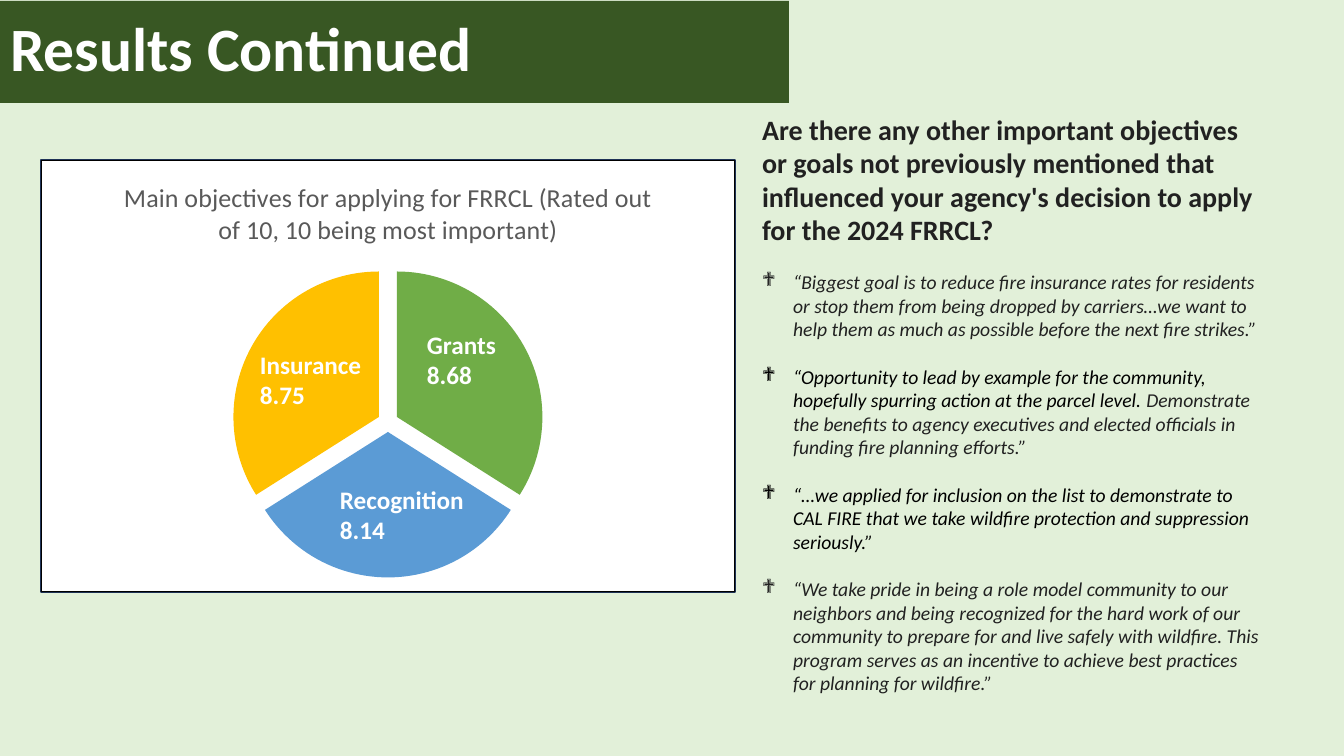
from lxml import etree
from pptx import Presentation
from pptx import util as u
from pptx.chart.data import CategoryChartData
from pptx.dml.color import RGBColor
from pptx.enum import chart as charts, shapes, text
from pptx.oxml import parse_xml
from pptx.oxml.ns import nsdecls, qn

THEME = {
    "font": "Calibri",
    "page": "E2F0D9", "banner": "385723", "white": "FFFFFF", "black": "000000",
    "ink": "212121", "frame": "1E3256", "caption": "595959",
    "slices": ["70AD47", "5B9BD5", "FFC000", "43682B"],
    "title_pt": 44, "question_pt": 20, "label_pt": 18, "caption_pt": 18.6,
    "quote_pt": 14, "gap_pt": 17,
}
PX = 914400 / 100.8
QUESTION = ("Are there any other important objectives or goals not previously mentioned "
            "that influenced your agency's decision to apply for the 2024 FRRCL?")
QUOTES = [
    [("“Biggest goal is to reduce fire insurance rates for residents or stop them from being "
      "dropped by carriers…we want to help them as much as possible before the next fire "
      "strikes.”", "ink")],
    [("“Opportunity to lead by example for the community, hopefully spurring action at the "
      "parcel level. ", "black"),
     ("Demonstrate the benefits to agency executives and elected officials in funding fire "
      "planning efforts.”", "ink")],
    [("“…we applied for inclusion on the list to demonstrate to CAL FIRE that we take wildfire "
      "protection and suppression seriously.”", "black")],
    [("“We take pride in being a role model community to our neighbors and being recognized for "
      "the hard work of our community to prepare for and live safely with wildfire. This program "
      "serves as an incentive to achieve best practices for planning for wildfire.”", "ink")],
]
LABELS = [("Grants", "8.68", 417, 324), ("Recognition", "8.14", 330, 479),
          ("Insurance", "8.75", 250, 344)]
FRAME = (41, 160, 694, 432)
PIE = (232, 266, 312, 312)


def emu(*lengths):
    """Turn px lengths into EMU."""
    return [u.Emu(round(length * PX)) for length in lengths]


def add_span(para, words, size, color, bold=False, italic=False):
    span = para.add_run()
    span.text = words
    font = span.font
    font.name, font.size = THEME["font"], u.Pt(THEME[size])
    font.bold, font.italic = bold, italic
    font.color.rgb = RGBColor.from_string(THEME[color])


deck = Presentation()
deck.slide_width, deck.slide_height = emu(1344, 756)
page = deck.slides.add_slide(deck.slide_layouts[1])
page.background.fill.solid()
page.background.fill.fore_color.rgb = RGBColor.from_string(THEME["page"])

# Title banner
banner = page.shapes.title
banner.left, banner.top, banner.width, banner.height = emu(0, 1, 789, 102)
banner.fill.solid()
banner.fill.fore_color.rgb = RGBColor.from_string(THEME["banner"])
banner.text_frame.auto_size = text.MSO_AUTO_SIZE.NONE
banner.text_frame.vertical_anchor = text.MSO_ANCHOR.MIDDLE
para = banner.text_frame.paragraphs[0]
para.alignment, para.line_spacing = text.PP_ALIGN.LEFT, 0.9
add_span(para, "Results Continued", "title_pt", "white", bold=True)

# Chart panel
panel = page.shapes.add_shape(shapes.MSO_SHAPE.RECTANGLE, *emu(*FRAME))
panel.shadow.inherit = False
panel.fill.solid()
panel.fill.fore_color.rgb = RGBColor.from_string(THEME["white"])
panel.line.color.rgb = RGBColor.from_string(THEME["frame"])
panel.line.width = u.Pt(1)

# Pie chart
ratings = CategoryChartData()
ratings.categories = ["1", "2", "3", "4"]
ratings.add_series("Series 1", [34, 32, 34, None])
pie = page.shapes.add_chart(charts.XL_CHART_TYPE.PIE, *emu(*FRAME), ratings).chart
pie.has_legend = False
pie.font.name, pie.font.size = THEME["font"], u.Pt(10)
pie.has_title = True
add_span(pie.chart_title.text_frame.paragraphs[0],
         "Main objectives for applying for FRRCL (Rated out of 10, 10 being most important)",
         "caption_pt", "caption")
pie.chart_title.include_in_layout = False
plot = pie.plots[0]
plot.vary_by_categories = True
series = plot.series[0]
for index, color in enumerate(THEME["slices"]):
    fill = series.points[index].format.fill
    fill.solid()
    fill.fore_color.rgb = RGBColor.from_string(color)
explosion = parse_xml(f'<c:explosion {nsdecls("c")} val="7"/>')
series._element.find(qn("c:dPt")).addprevious(explosion)

plot_area = pie._chartSpace.chart.plotArea
for old in plot_area.findall(qn("c:layout")):
    plot_area.remove(old)
layout = etree.Element(qn("c:layout"))
manual = etree.SubElement(layout, qn("c:manualLayout"))
settings = {
    "layoutTarget": "inner", "xMode": "edge", "yMode": "edge",
    "x": round((PIE[0] - FRAME[0]) / FRAME[2], 4),
    "y": round((PIE[1] - FRAME[1]) / FRAME[3], 4),
    "w": round(PIE[2] / FRAME[2], 4), "h": round(PIE[3] / FRAME[3], 4),
}
for name, value in settings.items():
    etree.SubElement(manual, qn(f"c:{name}")).set("val", str(value))
plot_area.insert(0, layout)
border = parse_xml(
    f'<c:spPr {nsdecls("c", "a")}><a:noFill/><a:ln w="9525"><a:solidFill>'
    f'<a:srgbClr val="{THEME["black"]}"/></a:solidFill></a:ln></c:spPr>')
pie._chartSpace.chart.addnext(border)

# Slice labels
for name, score, left, top in LABELS:
    box = page.shapes.add_textbox(*emu(left, top, 150, 72))
    box.text_frame.word_wrap = True
    add_span(box.text_frame.paragraphs[0], name, "label_pt", "white", bold=True)
    add_span(box.text_frame.add_paragraph(), score, "label_pt", "white", bold=True)

# Question and quotes
body = page.placeholders[1]
body.left, body.top, body.width, body.height = emu(752, 107, 518, 597)
body.text_frame.auto_size = text.MSO_AUTO_SIZE.NONE
para = body.text_frame.paragraphs[0]
para.space_before = u.Pt(0)
props = para._p.get_or_add_pPr()
props.set("marL", "0")
props.set("indent", "0")
etree.SubElement(props, qn("a:buNone"))
add_span(para, QUESTION, "question_pt", "ink", bold=True)
indent = emu(31)[0]
for quote in QUOTES:
    para = body.text_frame.add_paragraph()
    para.space_before = u.Pt(THEME["gap_pt"])
    props = para._p.get_or_add_pPr()
    props.set("marL", str(indent))
    props.set("indent", str(-indent))
    etree.SubElement(props, qn("a:buFont")).set("typeface", "Wingdings")
    etree.SubElement(props, qn("a:buChar")).set("char", "❖")
    for words, color in quote:
        add_span(para, words, "quote_pt", color, italic=True)

deck.save("out.pptx")
